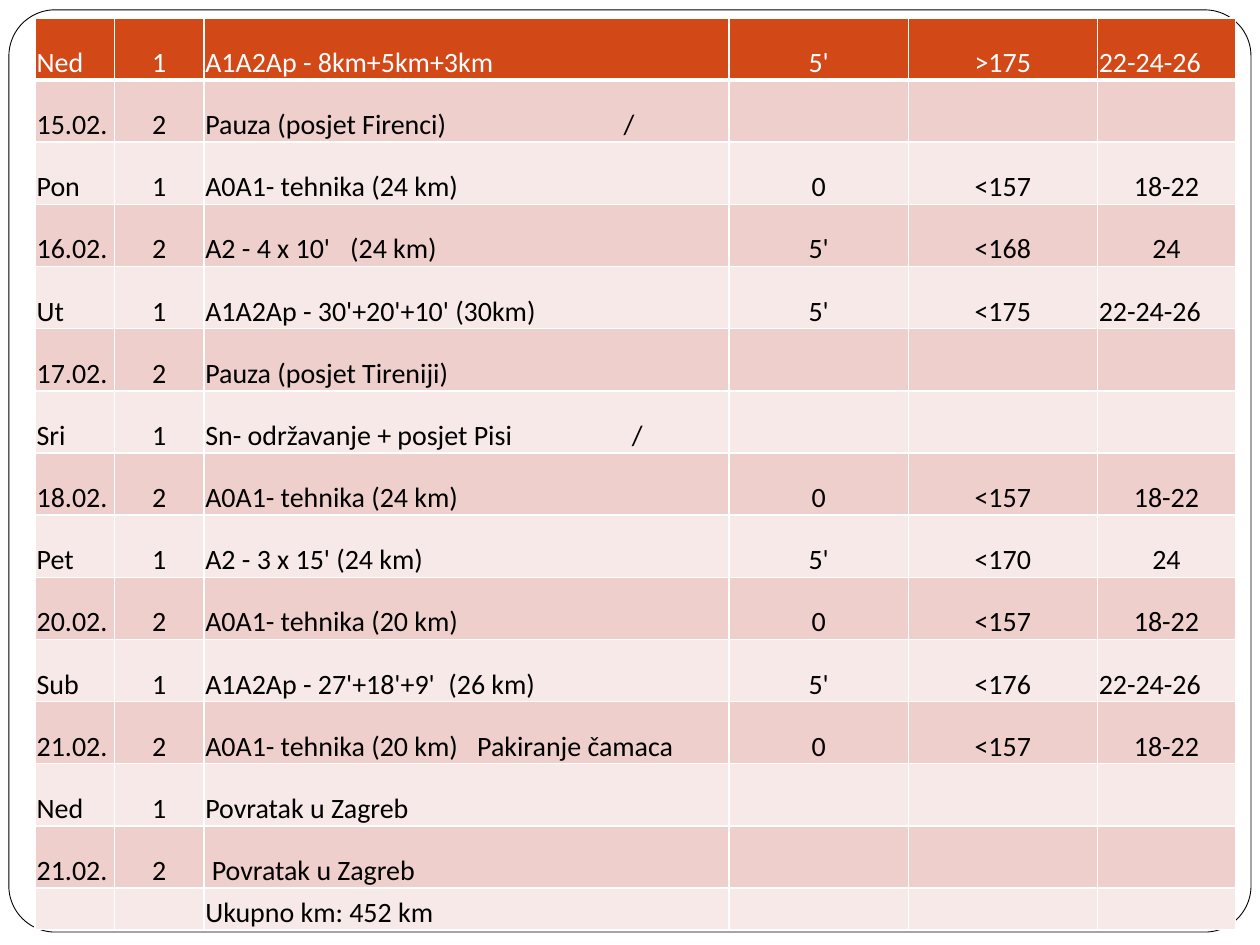
from lxml import etree
from pptx import Presentation
from pptx.dml.color import RGBColor
from pptx.enum.shapes import MSO_SHAPE
from pptx.enum.text import MSO_ANCHOR, PP_ALIGN
from pptx.oxml.ns import qn
from pptx.util import Cm, Pt

ROUNDED = MSO_SHAPE.ROUNDED_RECTANGLE
BOTTOM = MSO_ANCHOR.BOTTOM
LEFT, CENTER = PP_ALIGN.LEFT, PP_ALIGN.CENTER

# Training plan: day or date, session, training, rest, pulse, stroke rate
PLAN = [
    ("Ned", "1", "A1A2Ap - 8km+5km+3km", "5'", ">175", "22-24-26"),
    ("15.02.", "2", "Pauza (posjet Firenci)\t/", "", "", ""),
    ("Pon", "1", "A0A1- tehnika (24 km)", "0", "<157", "18-22"),
    ("16.02.", "2", "A2 - 4 x 10'\t(24 km)", "5'", "<168", "24"),
    ("Ut", "1", "A1A2Ap - 30'+20'+10' (30km)", "5'", "<175", "22-24-26"),
    ("17.02.", "2", "Pauza (posjet Tireniji)", "", "", ""),
    ("Sri", "1", "Sn- održavanje + posjet Pisi\t/", "", "", ""),
    ("18.02.", "2", "A0A1- tehnika (24 km)", "0", "<157", "18-22"),
    ("Pet", "1", "A2 - 3 x 15' (24 km)", "5'", "<170", "24"),
    ("20.02.", "2", "A0A1- tehnika (20 km)", "0", "<157", "18-22"),
    ("Sub", "1", "A1A2Ap - 27'+18'+9'\t(26 km)", "5'", "<176", "22-24-26"),
    ("21.02.", "2", "A0A1- tehnika (20 km)\tPakiranje čamaca", "0", "<157", "18-22"),
    ("Ned", "1", "Povratak u Zagreb", "", "", ""),
    ("21.02.", "2", "Povratak u Zagreb", "", "", ""),
    ("", "", "Ukupno km: 452 km", "", "", ""),
]
TAB_STOPS = {1: 8.43, 3: 2.92, 6: 8.6, 10: 4.9, 11: 5.48}  # row: cm
INDENTS = {13: 0.13}  # row: cm
TRAINING_COLUMN = 2

COLUMN_WIDTHS = [1.6, 1.8, 10.59, 3.61, 3.81, 2.79]
TABLE_HEIGHT, TOTAL_ROW_HEIGHT = 18.39, 0.84
ROW_HEIGHT = (TABLE_HEIGHT - TOTAL_ROW_HEIGHT) / (len(PLAN) - 1)

WHITE, BLACK, HEADER = "FFFFFF", "000000", "D34817"
BANDS = ["F7E9E8", "EFCFCC"]


def paint(color_format, color):
    color_format.rgb = RGBColor.from_string(color)


def paint_fill(fill, color):
    fill.solid()
    paint(fill.fore_color, color)


def set_borders(cell, top, bottom):
    properties = cell._tc.get_or_add_tcPr()
    for side, points in (("lnL", 1), ("lnR", 1), ("lnT", top), ("lnB", bottom)):
        line = etree.SubElement(properties, qn(f"a:{side}"), w=str(Pt(points)))
        fill = etree.SubElement(line, qn("a:solidFill"))
        etree.SubElement(fill, qn("a:srgbClr"), val=WHITE)


def set_tab_stop(paragraph, position):
    tabs = etree.SubElement(paragraph._p.get_or_add_pPr(), qn("a:tabLst"))
    etree.SubElement(tabs, qn("a:tab"), pos=str(Cm(position)), algn="l")


def fill_cell(cell, text, row, column):
    is_header = row == 0
    set_borders(cell, top=3 if row == 1 else 1, bottom=3 if is_header else 1)
    paint_fill(cell.fill, HEADER if is_header else BANDS[row % 2])
    cell.vertical_anchor = BOTTOM
    cell.margin_left = cell.margin_right = cell.margin_top = Cm(0.03)
    cell.margin_bottom = 0
    cell.text = text

    paragraph = cell.text_frame.paragraphs[0]
    is_left = column in (0, TRAINING_COLUMN) or text == "22-24-26"
    paragraph.alignment = LEFT if is_left else CENTER
    if column == TRAINING_COLUMN:
        cell.margin_left = Cm(0.03 + INDENTS.get(row, 0))
        if row in TAB_STOPS:
            set_tab_stop(paragraph, TAB_STOPS[row])
    font = paragraph.font
    font.name, font.size, font.bold = "Calibri", Pt(16), False
    paint(font.color, WHITE if is_header else BLACK)


def main():
    presentation = Presentation()
    presentation.slide_width, presentation.slide_height = Cm(25.4), Cm(19.05)
    slide = presentation.slides.add_slide(presentation.slide_layouts[6])

    # Rounded frame
    frame = slide.shapes.add_shape(ROUNDED, Cm(0.18), Cm(0.2), Cm(25.04), Cm(18.59))
    frame.adjustments[0] = 0.05
    frame.shadow.inherit = False
    paint_fill(frame.fill, WHITE)
    paint(frame.line.color, BLACK)
    frame.line.width = Pt(0.5)

    # Training table
    table = slide.shapes.add_table(
        len(PLAN), len(COLUMN_WIDTHS), Cm(0.71), Cm(0.36),
        Cm(sum(COLUMN_WIDTHS)), Cm(TABLE_HEIGHT),
    ).table
    for column, width in zip(table.columns, COLUMN_WIDTHS):
        column.width = Cm(width)
    for row in table.rows:
        row.height = Cm(ROW_HEIGHT)
    table.rows[len(PLAN) - 1].height = Cm(TOTAL_ROW_HEIGHT)
    for row, texts in enumerate(PLAN):
        for column, text in enumerate(texts):
            fill_cell(table.cell(row, column), text, row, column)

    presentation.save("out.pptx")


if __name__ == "__main__":
    main()
